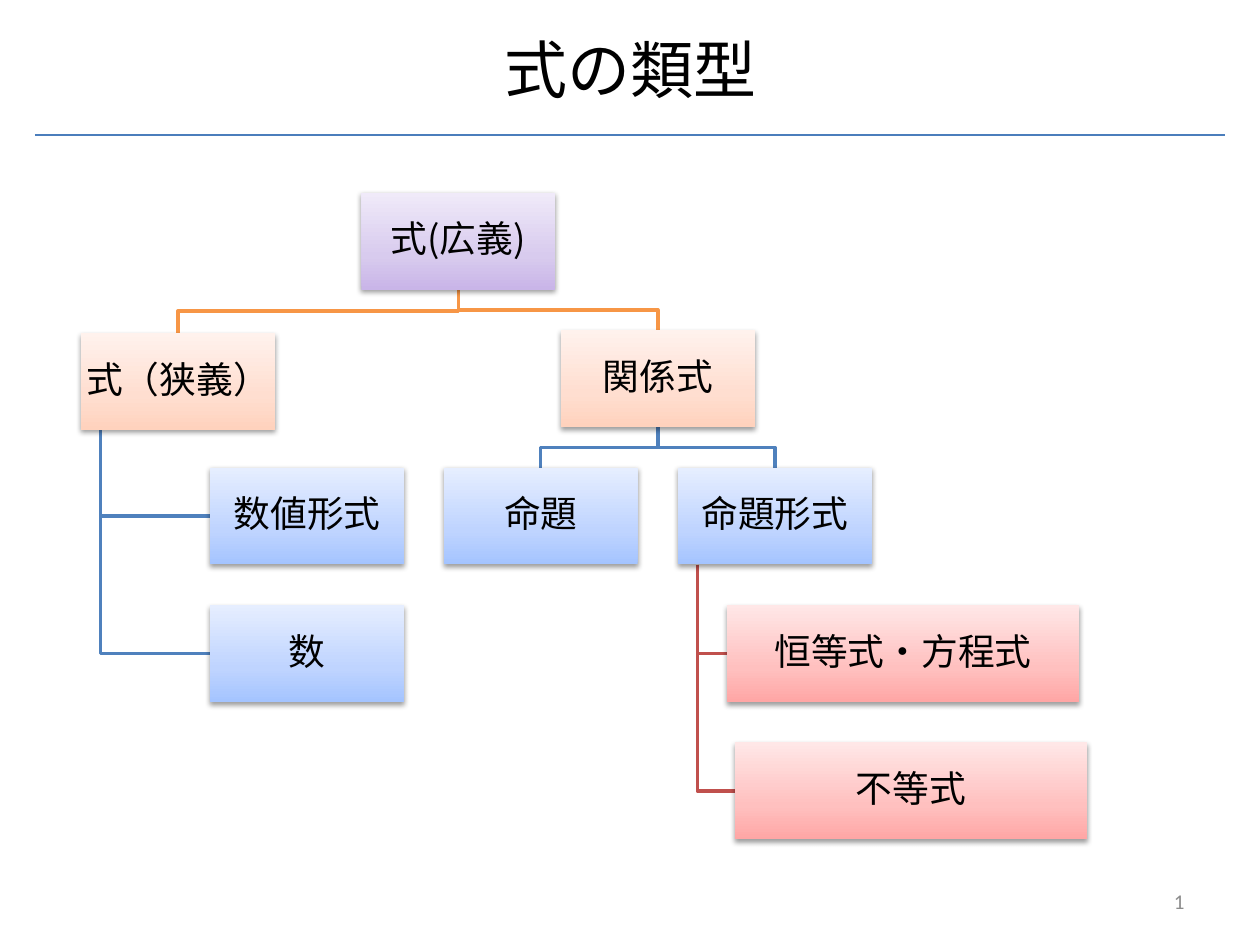
from pptx import Presentation
from pptx.dml.color import RGBColor
from pptx.enum import shapes as sh, text as tx
from pptx.oxml import parse_xml
from pptx.oxml.ns import nsdecls, qn
from pptx.util import Pt

FONT = "Noto Sans CJK JP"
WIDE, TALL, STEP = 110.8, 55.4, 78.55
BLUE, ORANGE, RED = "4F81BD", "F79646", "C0504D"
FILLS = {
    "purple": ("C9B5E8", "D8CBEE", "F0EAF9"),
    "orange": ("FFD2BD", "FFDED0", "FFF2ED"),
    "blue": ("A4C4FF", "BFD4FF", "E6EEFF"),
    "red": ("FFA6A5", "FFC0BF", "FFE7E7"),
}
NODES = {
    "root": ("式(広義)", 160.2, 0, WIDE, "purple"),
    "narrow": ("式（狭義）", 0, STEP + 1.5, WIDE, "orange"),
    "relation": ("関係式", 274.2, STEP, WIDE, "orange"),
    "numeric": ("数値形式", 73.8, 2 * STEP, WIDE, "blue"),
    "number": ("数", 73.8, 3 * STEP, WIDE, "blue"),
    "claim": ("命題", 207.3, 2 * STEP, WIDE, "blue"),
    "form": ("命題形式", 341.1, 2 * STEP, WIDE, "blue"),
    "equal": ("恒等式・方程式", 369.1, 3 * STEP, 201.2, "red"),
    "unequal": ("不等式", 373.7, 4 * STEP, 201.2, "red"),
}
FORKS = [("root", "narrow", ORANGE), ("root", "relation", ORANGE),
         ("relation", "claim", BLUE), ("relation", "form", BLUE)]
HANGS = [("narrow", "number", BLUE), ("narrow", "numeric", BLUE),
         ("form", "unequal", RED), ("form", "equal", RED)]


def color(code):
    """Turn a hex string into a colour."""
    return RGBColor.from_string(code)


def write(frame, words, size, align, font=FONT, code="000000", inset=0.72):
    """Write one formatted run in a vertically centred frame."""
    frame.word_wrap = True
    frame.auto_size = tx.MSO_AUTO_SIZE.NONE
    frame.vertical_anchor = tx.MSO_ANCHOR.MIDDLE
    frame.margin_left = frame.margin_right = Pt(inset)
    frame.margin_top = frame.margin_bottom = Pt(0.72)
    para = frame.paragraphs[0]
    para.alignment = align
    run = para.add_run()
    run.text = words
    run.font.size = Pt(size)
    run.font.name = font
    run.font.color.rgb = color(code)
    run.font._element.append(
        parse_xml(f'<a:ea {nsdecls("a")} typeface="{font}"/>'))
    return para


def blend(shape, codes):
    """Fill a shape with a three-stop upright gradient."""
    shape.fill.gradient()
    shape.fill.gradient_angle = 90
    stops = shape._element.spPr.find(qn("a:gradFill")).find(qn("a:gsLst"))
    for stop in list(stops):
        stops.remove(stop)
    for pos, code in zip((0, 35000, 100000), codes):
        stops.append(parse_xml(
            f'<a:gs {nsdecls("a")} pos="{pos}"><a:srgbClr val="{code}"/></a:gs>'))


def shade(shape):
    """Give a shape a soft shadow straight below it."""
    shape.shadow.inherit = False
    shape._element.spPr.find(qn("a:effectLst")).append(parse_xml(
        f'<a:outerShdw {nsdecls("a")} blurRad="{Pt(3.1)}" dist="{Pt(1.6)}" '
        'dir="5400000" rotWithShape="0"><a:srgbClr val="000000">'
        '<a:alpha val="38000"/></a:srgbClr></a:outerShdw>'))


def node(slide, left, top, name):
    """Draw one labelled box of the tree."""
    words, x, y, wide, tone = NODES[name]
    box = slide.shapes.add_shape(sh.MSO_SHAPE.RECTANGLE, Pt(left + x),
                                 Pt(top + y), Pt(wide), Pt(TALL))
    blend(box, FILLS[tone])
    box.line.fill.background()
    shade(box)
    para = write(box.text_frame, words, 21, tx.PP_ALIGN.CENTER)
    para.line_spacing = 0.9


def trace(slide, left, top, points, code):
    """Draw an open bent line through points."""
    spots = [(Pt(left + x), Pt(top + y)) for x, y in points]
    path = slide.shapes.build_freeform(*spots[0])
    path.add_line_segments(spots[1:], close=False)
    line = path.convert_to_shape()
    line.fill.background()
    line.line.color.rgb = color(code)
    line.line.width = Pt(2)
    line.shadow.inherit = False


def fork(slide, left, top, above, below, code):
    """Link the foot of one box to the head of another."""
    _, ax, ay, aw, _ = NODES[above]
    _, bx, by, bw, _ = NODES[below]
    start, end = ax + aw / 2, bx + bw / 2
    mid = (ay + TALL + by) / 2
    trace(slide, left, top,
          [(start, ay + TALL), (start, mid), (end, mid), (end, by)], code)


def hang(slide, left, top, above, below, code):
    """Link a box to the left side of one hanging below it."""
    _, ax, ay, aw, _ = NODES[above]
    _, bx, by, _, _ = NODES[below]
    stem, mid = ax + aw / 10, by + TALL / 2
    trace(slide, left, top, [(stem, ay + TALL), (stem, mid), (bx, mid)], code)


def tree(slide, left, top):
    """Draw all links, then all boxes."""
    for link in FORKS:
        fork(slide, left, top, *link)
    for link in HANGS:
        hang(slide, left, top, *link)
    for name in NODES:
        node(slide, left, top, name)


def head(slide, left, top, wide, tall):
    """Place the title and the rule under it."""
    rule = slide.shapes.add_connector(
        sh.MSO_CONNECTOR.STRAIGHT, Pt(left - 16), Pt(top + tall),
        Pt(left + wide + 16), Pt(top + tall))
    rule.line.color.rgb = color("4B7EBC")
    rule.line.width = Pt(0.75)
    rule._element.spPr.append(parse_xml(f'<a:effectLst {nsdecls("a")}/>'))
    title = slide.shapes.title
    title.left, title.top = Pt(left), Pt(top)
    title.width, title.height = Pt(wide), Pt(tall)
    write(title.text_frame, "式の類型", 36, tx.PP_ALIGN.CENTER)


def foot(slide, left, top, wide, tall):
    """Place the page number."""
    box = slide.shapes.add_textbox(Pt(left), Pt(top), Pt(wide), Pt(tall))
    write(box.text_frame, "1", 12, tx.PP_ALIGN.RIGHT, "Calibri", "8C8C8C", 7.2)


def main():
    """Build and save the slide."""
    deck = Presentation()
    deck.slide_width, deck.slide_height = Pt(720), Pt(540)
    slide = deck.slides.add_slide(deck.slide_layouts[5])
    head(slide, 36, 0.7, 648, 76.5)
    tree(slide, 46.3, 110.1)
    foot(slide, 516, 500.5, 168, 28.8)
    deck.save("out.pptx")


if __name__ == "__main__":
    main()
